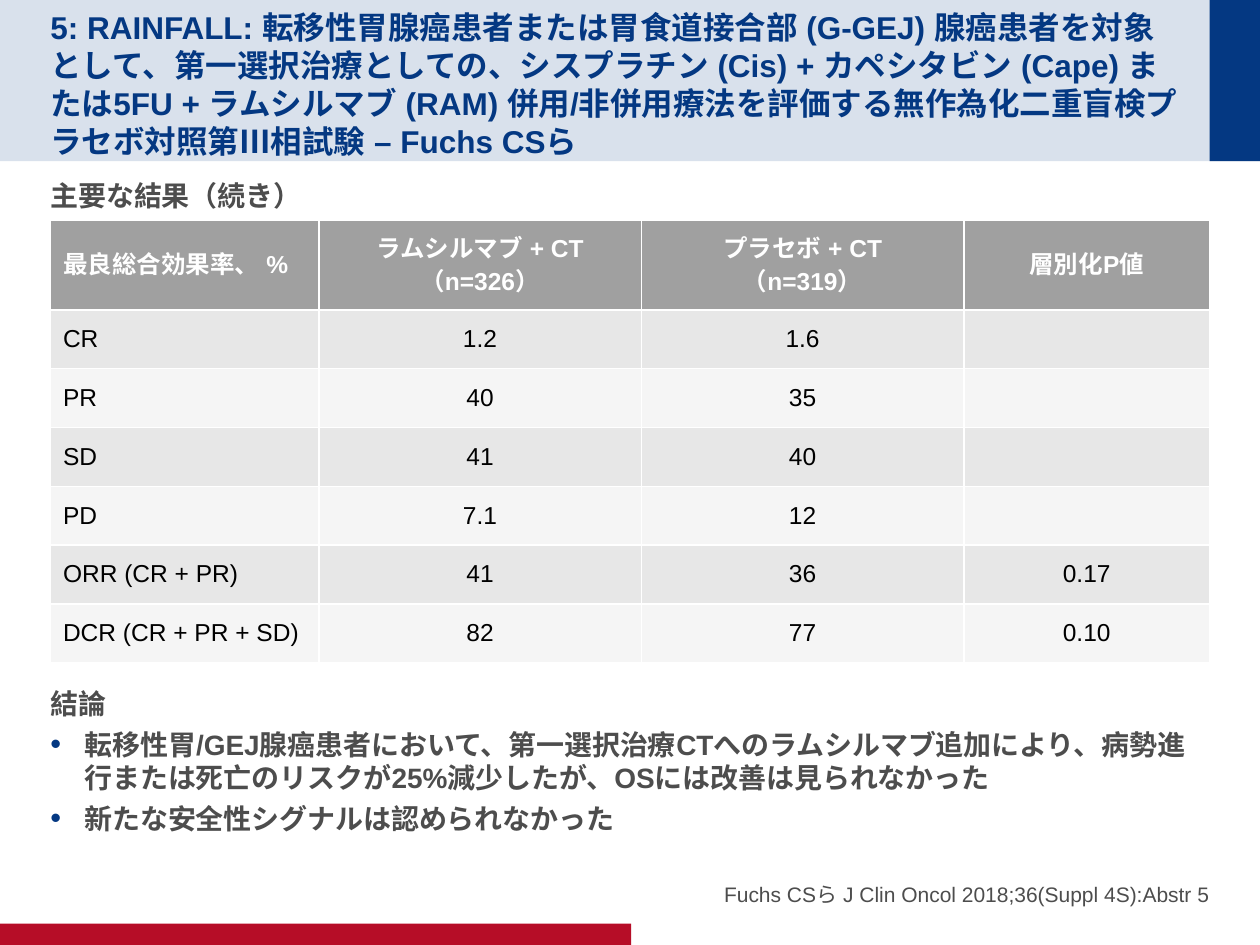
import pptx
import pptx.dml.color
import pptx.enum.shapes
import pptx.enum.text
import pptx.oxml.ns
import pptx.util
from lxml import etree

Inches = pptx.util.Inches
Pt = pptx.util.Pt
qn = pptx.oxml.ns.qn
ALIGN = pptx.enum.text.PP_ALIGN
ANCHOR = pptx.enum.text.MSO_ANCHOR

COLORS = {"navy": "043882", "red": "B60D27", "grey": "A0A0A0",
          "text": "4D4D4D", "black": "000000", "white": "FFFFFF"}

TITLE = ("5: RAINFALL: 転移性胃腺癌患者または胃食道接合部 (G-GEJ) 腺癌患者を対象として、"
         "第一選択治療としての、シスプラチン (Cis) + カペシタビン (Cape) または5FU + "
         "ラムシルマブ (RAM) 併用/非併用療法を評価する無作為化二重盲検プラセボ対照第Ⅲ相試験 "
         "– Fuchs CSら")
CONCLUSIONS = [
    "転移性胃/GEJ腺癌患者において、第一選択治療CTへのラムシルマブ追加により、"
    "病勢進行または死亡のリスクが25%減少したが、OSには改善は見られなかった",
    "新たな安全性シグナルは認められなかった",
]
RESPONSES = [
    ["最良総合効果率、 %", "ラムシルマブ + CT\n（n=326）", "プラセボ + CT\n（n=319）", "層別化P値"],
    ["CR", "1.2", "1.6", ""],
    ["PR", "40", "35", ""],
    ["SD", "41", "40", ""],
    ["PD", "7.1", "12", ""],
    ["ORR (CR + PR)", "41", "36", "0.17"],
    ["DCR (CR + PR + SD)", "82", "77", "0.10"],
]
COLUMN_WIDTHS = [2.13, 2.56, 2.56, 1.95]


def set_fill(fill, color, opacity=100):
    fill.solid()
    fill.fore_color.rgb = pptx.dml.color.RGBColor.from_string(COLORS[color])
    if opacity < 100:
        tint = fill._xPr.find(".//" + qn("a:srgbClr"))
        etree.SubElement(tint, qn("a:alpha"), val=str(opacity * 1000))


def add_band(slide, left, top, width, height, color, opacity=100):
    band = slide.shapes.add_shape(pptx.enum.shapes.MSO_SHAPE.RECTANGLE, Inches(left),
                                  Inches(top), Inches(width), Inches(height))
    band.shadow.inherit = False
    band.line.fill.background()
    set_fill(band.fill, color, opacity)


def write(paragraph, text, size, color, bold=False, **spacing):
    """Fill a paragraph with one run; spacing holds paragraph attributes."""
    run = paragraph.add_run()
    run.text = text
    for name, value in {"name": "Arial", "size": Pt(size), "bold": bold}.items():
        setattr(run.font, name, value)
    run.font.color.rgb = pptx.dml.color.RGBColor.from_string(COLORS[color])
    etree.SubElement(run.font._element, qn("a:ea"), typeface="Arial")
    for name, value in spacing.items():
        setattr(paragraph, name, value)


def add_text_frame(slide, left, top, width, height, anchor=ANCHOR.TOP, inset=(0.05, 0.05)):
    frame = slide.shapes.add_textbox(Inches(left), Inches(top), Inches(width),
                                     Inches(height)).text_frame
    layout = {"word_wrap": True, "vertical_anchor": anchor, "margin_left": 0,
              "margin_right": 0, "margin_top": Inches(inset[0]),
              "margin_bottom": Inches(inset[1])}
    for name, value in layout.items():
        setattr(frame, name, value)
    return frame


def add_bullet(paragraph):
    properties = paragraph._p.get_or_add_pPr()
    properties.set("marL", str(Inches(0.27)))
    properties.set("indent", str(-Inches(0.27)))
    bullet_color = etree.SubElement(properties, qn("a:buClr"))
    etree.SubElement(bullet_color, qn("a:srgbClr"), val=COLORS["navy"])
    etree.SubElement(properties, qn("a:buSzPct"), val="110000")
    etree.SubElement(properties, qn("a:buFont"), typeface="Arial")
    etree.SubElement(properties, qn("a:buChar"), char="•")


def add_header(slide, left, top, width, height):
    add_band(slide, left, top, width, height, "navy", 15)
    add_band(slide, left + width - 0.4, top, 0.4, height, "navy")
    title = add_text_frame(slide, left + 0.4, top + 0.2, width - 0.99, height - 0.4,
                           ANCHOR.MIDDLE, (0.05, 0))
    write(title.paragraphs[0], TITLE, 18, "navy", True)


def rule_cell(cell):
    """Draw white rules above and below a cell."""
    properties = cell._tc.get_or_add_tcPr()
    for position, side in enumerate(("a:lnT", "a:lnB")):
        rule = etree.Element(qn(side), w=str(Pt(1)))
        paint = etree.SubElement(rule, qn("a:solidFill"))
        etree.SubElement(paint, qn("a:srgbClr"), val=COLORS["white"])
        properties.insert(position, rule)


def add_response_table(slide, left, top, width, height):
    header_height = 0.71
    row_height = (height - header_height) / (len(RESPONSES) - 1)
    table = slide.shapes.add_table(len(RESPONSES), len(COLUMN_WIDTHS), Inches(left),
                                   Inches(top), Inches(width), Inches(height)).table
    for column, column_width in zip(table.columns, COLUMN_WIDTHS):
        column.width = Inches(column_width)
    for r, values in enumerate(RESPONSES):
        is_header = r == 0
        table.rows[r].height = Inches(header_height if is_header else row_height)
        opacity = 100 if is_header else 25 if r % 2 else 10
        for c, value in enumerate(values):
            cell = table.cell(r, c)
            cell.vertical_anchor = ANCHOR.MIDDLE
            set_fill(cell.fill, "grey", opacity)
            rule_cell(cell)
            for i, line in enumerate(value.split("\n") if value else []):
                frame = cell.text_frame
                paragraph = frame.add_paragraph() if i else frame.paragraphs[0]
                write(paragraph, line, 14, "white" if is_header else "black", is_header,
                      alignment=ALIGN.CENTER if c else ALIGN.LEFT, space_before=Pt(3))


def add_results(slide, left, top, width, height):
    heading = add_text_frame(slide, left, top, width, 0.38)
    write(heading.paragraphs[0], "主要な結果（続き）", 16, "text", True)
    add_response_table(slide, left, top + 0.38, width, height - 0.38)


def add_conclusions(slide, left, top, width, height):
    frame = add_text_frame(slide, left, top, width, height)
    write(frame.paragraphs[0], "結論", 16, "text", True, space_after=Pt(4))
    for conclusion in CONCLUSIONS:
        paragraph = frame.add_paragraph()
        write(paragraph, conclusion, 16, "text", True, space_after=Pt(4))
        add_bullet(paragraph)


def add_footer(slide, left, top, width, height):
    add_band(slide, left, top + height - 0.17, 5.01, 0.17, "red")
    citation = add_text_frame(slide, left + 5.08, top, width - 5.48, height - 0.3,
                              ANCHOR.BOTTOM, (0, 0))
    write(citation.paragraphs[0], "Fuchs CSら J Clin Oncol 2018;36(Suppl 4S):Abstr 5",
          12, "text", alignment=ALIGN.RIGHT)


def main():
    deck = pptx.Presentation()
    deck.slide_width, deck.slide_height = Inches(10), Inches(7.5)
    slide = deck.slides.add_slide(deck.slide_layouts[6])
    add_header(slide, 0, 0, 10, 1.28)
    add_results(slide, 0.4, 1.37, 9.2, 3.89)
    add_conclusions(slide, 0.4, 5.4, 9.2, 1.26)
    add_footer(slide, 0, 6.67, 10, 0.83)
    deck.save("out.pptx")


if __name__ == "__main__":
    main()
